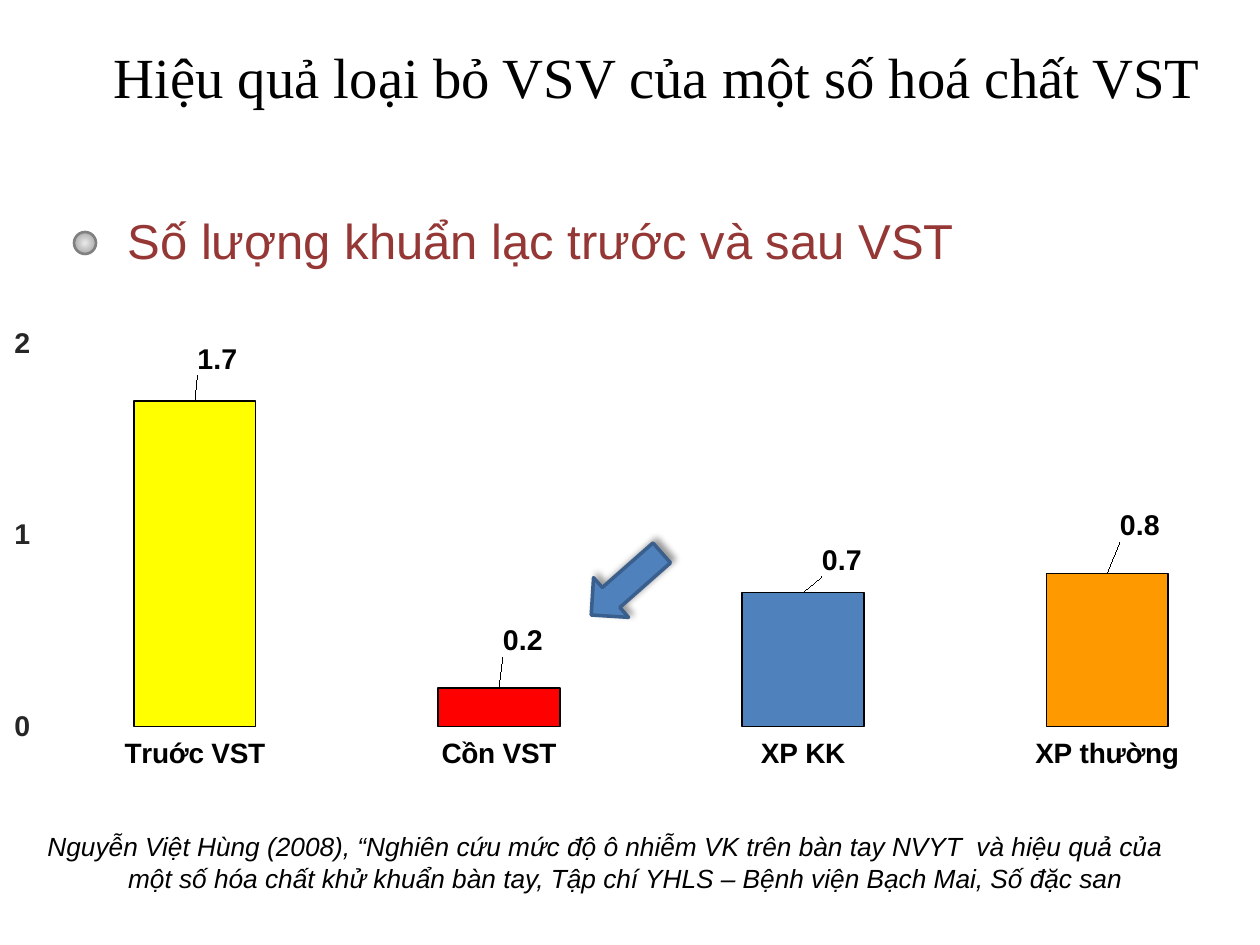
from lxml import etree
from pptx import Presentation, util as u
from pptx.chart.data import CategoryChartData
from pptx.dml.color import RGBColor
from pptx.enum import chart as charts, shapes, text
from pptx.oxml import parse_xml
from pptx.oxml.ns import nsdecls, qn

PX = 914400 // 126
TITLE = "Hiệu quả loại bỏ VSV của một số hoá chất VST"
SUBTITLE = "Số lượng khuẩn lạc trước và sau VST"
SOURCE = [
    ("Nguyễn Việt Hùng (2008), “Nghiên cứu mức độ ô nhiễm VK trên bàn tay NVYT  và hiệu quả của",
     text.PP_ALIGN.LEFT),
    ("một số hóa chất khử khuẩn bàn tay, Tập chí YHLS – Bệnh viện Bạch Mai, Số đặc san",
     text.PP_ALIGN.CENTER),
]
# category, value, bar colour, label shift in px
BARS = [
    ("Truớc VST", 1.7, "FFFF00", (23, -20)),
    ("Cồn VST", 0.2, "FF0000", (24, -26)),
    ("XP KK", 0.7, "4F81BD", (39, -11)),
    ("XP thường", 0.8, "FF9900", (33, -26)),
]
CHART_BOX = (0, 321, 1260, 493)
PLOT = {"x": 0.034, "y": 0.046, "w": 0.966, "h": 0.777}


def px(*lengths):
    return [length * PX for length in lengths]


def rgb(value):
    return RGBColor.from_string(value)


def place(shape, box):
    shape.left, shape.top, shape.width, shape.height = px(*box)


def style_font(font, size, color="000000", name="Arial", bold=False, italic=False):
    font.size, font.name, font.bold, font.italic = u.Pt(size), name, bold, italic
    font.color.rgb = rgb(color)


def write(para, words, align=text.PP_ALIGN.LEFT, **style):
    para.alignment = align
    para.space_before = u.Pt(0)
    span = para.add_run()
    span.text = words
    style_font(span.font, **style)


def prepare_frame(shape):
    frame = shape.text_frame
    frame.word_wrap = True
    frame.auto_size = text.MSO_AUTO_SIZE.NONE
    frame.vertical_anchor = text.MSO_ANCHOR.MIDDLE
    return frame


def outline(line, color, width):
    line.color.rgb = rgb(color)
    line.width = u.Pt(width)


def manual_layout(inner=False, **fractions):
    layout = etree.Element(qn("c:layout"))
    manual = etree.SubElement(layout, qn("c:manualLayout"))
    settings = dict(layoutTarget="inner", xMode="edge", yMode="edge") if inner else {}
    for tag, value in {**settings, **fractions}.items():
        etree.SubElement(manual, qn(f"c:{tag}")).set("val", str(value))
    return layout


def format_axis(axis, size, color):
    axis.has_major_gridlines = False
    axis.major_tick_mark = charts.XL_TICK_MARK.OUTSIDE
    outline(axis.format.line, "FFFFFF", 0.9)
    style_font(axis.tick_labels.font, size, color, bold=True)


def add_bars(page):
    data = CategoryChartData()
    data.categories = [bar[0] for bar in BARS]
    data.add_series("Series 1", [bar[1] for bar in BARS])
    chart = page.shapes.add_chart(
        charts.XL_CHART_TYPE.COLUMN_CLUSTERED, *px(*CHART_BOX), data).chart
    chart.has_legend = chart.has_title = False
    style_font(chart.font, 16.3, bold=True)

    format_axis(chart.category_axis, 16, "000000")
    chart.category_axis.tick_label_position = charts.XL_TICK_LABEL_POSITION.LOW
    values = chart.value_axis
    format_axis(values, 16.3, "262626")
    values.minimum_scale, values.maximum_scale, values.major_unit = 0, 2, 1

    plot = chart.plots[0]
    plot.gap_width = 150
    plot.vary_by_categories = False
    area = chart._chartSpace.chart.plotArea
    for old in area.findall(qn("c:layout")):
        area.remove(old)
    area.insert(0, manual_layout(inner=True, **PLOT))

    series = plot.series[0]
    for index, (_, _, color, (dx, dy)) in enumerate(BARS):
        point = series.points[index]
        point.format.fill.solid()
        point.format.fill.fore_color.rgb = rgb(color)
        outline(point.format.line, "000000", 0.9)
        label = point.data_label
        style_font(label.font, 16.3, bold=True)
        label.position = charts.XL_LABEL_POSITION.OUTSIDE_END
        shift = manual_layout(x=round(dx / CHART_BOX[2], 3), y=round(dy / CHART_BOX[3], 3))
        label._get_or_add_dLbl().insert(1, shift)


def add_arrow(page):
    arrow = page.shapes.add_shape(shapes.MSO_SHAPE.DOWN_ARROW, *px(600, 537, 53, 94))
    arrow.rotation = 48.6
    arrow.fill.solid()
    arrow.fill.fore_color.rgb = rgb("4F81BD")
    outline(arrow.line, "3A5F8C", 2)
    arrow._element.spPr.append(parse_xml(
        f'<a:effectLst {nsdecls("a")}><a:outerShdw blurRad="{u.Pt(4)}" dist="{u.Pt(3)}" '
        'dir="18900000" algn="bl" rotWithShape="0"><a:srgbClr val="000000">'
        '<a:alpha val="40000"/></a:srgbClr></a:outerShdw></a:effectLst>'))


def add_bullet(page):
    bullet = page.shapes.add_shape(shapes.MSO_SHAPE.OVAL, *px(74, 232, 22, 22))
    bullet.shadow.inherit = False
    bullet.fill.gradient()
    for stop, position, color in zip(bullet.fill.gradient_stops, (0, 1), ("EAEAEA", "969696")):
        stop.position = position
        stop.color.rgb = rgb(color)
    gradient = bullet._element.spPr.find(qn("a:gradFill"))
    gradient.replace(gradient.find(qn("a:lin")), parse_xml(
        f'<a:path {nsdecls("a")} path="circle">'
        '<a:fillToRect l="50000" t="50000" r="50000" b="50000"/></a:path>'))
    outline(bullet.line, "808080", 1.5)


def main():
    deck = Presentation()
    deck.slide_width, deck.slide_height = px(1260, 945)
    page = deck.slides.add_slide(deck.slide_layouts[1])

    title, body = page.placeholders
    place(title, (54, 16, 1206, 120))
    write(prepare_frame(title).paragraphs[0], TITLE, text.PP_ALIGN.CENTER,
          size=32.4, name="Times New Roman")

    add_bars(page)

    place(body, (115, 195, 1145, 90))
    para = prepare_frame(body).paragraphs[0]
    write(para, SUBTITLE, size=28, color="953735")
    settings = para._p.get_or_add_pPr()
    settings.set("marL", "0")
    settings.set("indent", "0")
    etree.SubElement(settings, qn("a:buNone"))

    source = page.shapes.add_textbox(*px(35, 829, 1181, 66))
    frame = prepare_frame(source)
    for index, (words, align) in enumerate(SOURCE):
        para = frame.add_paragraph() if index else frame.paragraphs[0]
        write(para, words, align, size=15, italic=True)

    add_arrow(page)
    add_bullet(page)
    deck.save("out.pptx")


if __name__ == "__main__":
    main()
